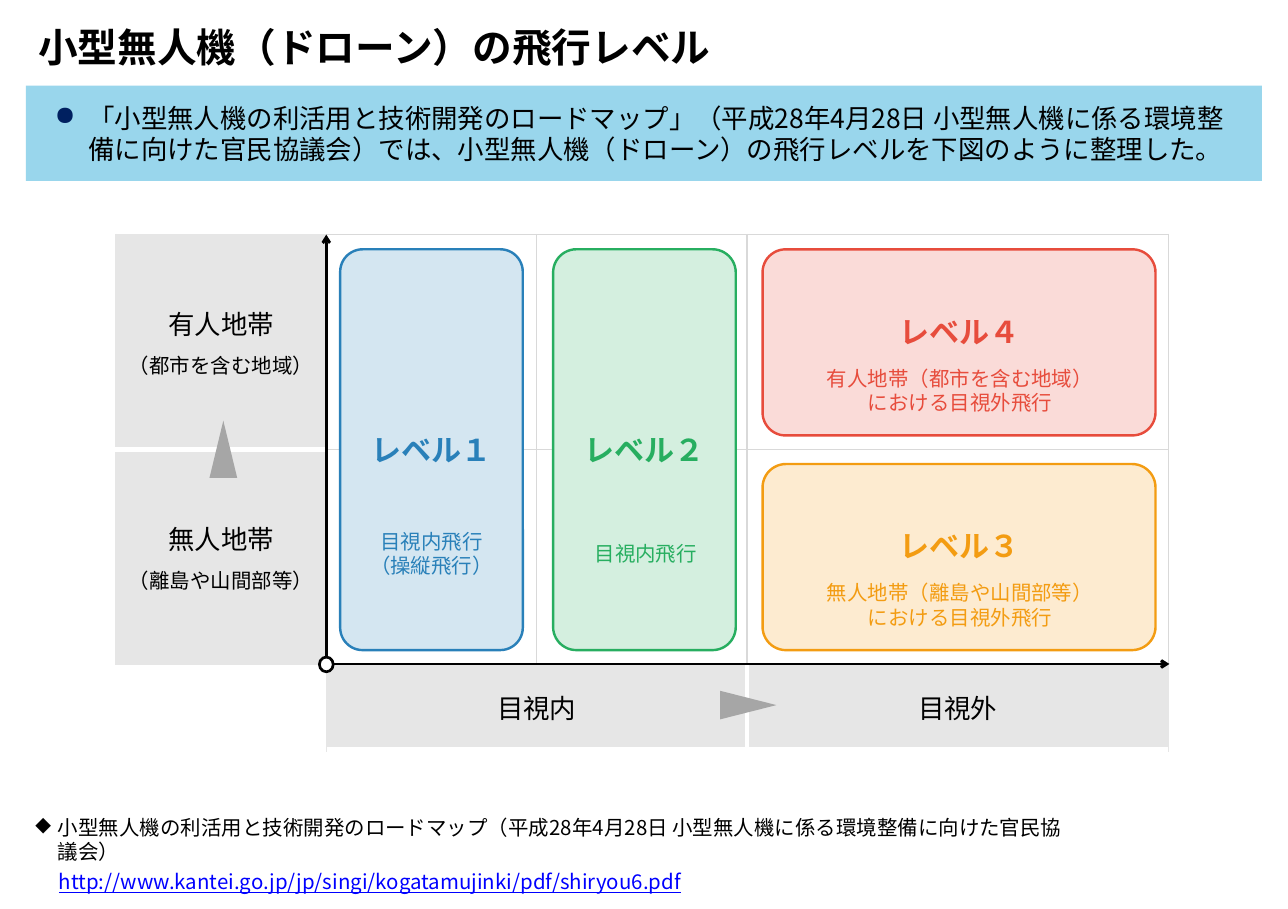
from dataclasses import dataclass
from typing import Optional

import pptx
import pptx.dml.color
import pptx.enum.shapes
import pptx.enum.text
import pptx.oxml.ns
import pptx.util
from lxml import etree

Inches = pptx.util.Inches
Pt = pptx.util.Pt
qn = pptx.oxml.ns.qn
SHAPE = pptx.enum.shapes.MSO_SHAPE
ALIGN = pptx.enum.text.PP_ALIGN
Box = tuple[float, float, float, float]


@dataclass(frozen=True)
class Theme:
    font: str = "Noto Sans CJK JP"
    black: str = "000000"
    white: str = "FFFFFF"
    banner: str = "99D6EC"
    bullet: str = "002060"
    link: str = "0000FF"
    label: str = "E6E6E6"
    grid: str = "D9D9D9"
    pointer: str = "A6A6A6"
    title_size: float = 33
    level_size: float = 25
    body_size: float = 22
    note_size: float = 17
    tight: float = 1.2  # line pitch as a multiple of the type size


@dataclass(frozen=True)
class Level:
    name: str
    note: tuple[str, ...]
    box: Box
    note_box: Box
    fill: str
    color: str
    radius: float
    bottom: float = 0.07


@dataclass(frozen=True)
class Label:
    row: int
    col: int
    text: str
    detail: str
    white_sides: str  # sides that separate this label from its neighbour


T = Theme()

LEVELS = [
    Level("レベル１", ("目視内飛行", "（操縦飛行）"), (3.93, 2.88, 2.11, 4.63),
          (4.04, 6.01, 1.89, 0.77), "D4E6F1", "2980B9", 0.123),
    Level("レベル２", ("目視内飛行",), (6.39, 2.88, 2.11, 4.63),
          (6.35, 6.01, 2.22, 0.77), "D4EFDF", "27AE60", 0.127),
    Level("レベル３", ("無人地帯（離島や山間部等）", "における目視外飛行"), (8.81, 5.36, 4.54, 2.15),
          (8.82, 6.66, 4.54, 0.66), "FDEBD0", "F39C12", 0.126, 0.33),
    Level("レベル４", ("有人地帯（都市を含む地域）", "における目視外飛行"), (8.81, 2.88, 4.54, 2.15),
          (8.82, 4.18, 4.54, 0.66), "FADBD8", "E74C3C", 0.124, 0.33),
]

LABELS = [
    Label(0, 0, "有人地帯", "（都市を含む地域）", "B"),
    Label(1, 0, "無人地帯", "（離島や山間部等）", "T"),
    Label(2, 1, "目視内", "", "RB"),
    Label(2, 3, "目視外", "", "LB"),
]


def rgb(color: str) -> pptx.dml.color.RGBColor:
    return pptx.dml.color.RGBColor.from_string(color)


def add_text(tf, text: str, *, size: float, color: str = T.black, bold: bool = False,
             underline: bool = False, align=ALIGN.LEFT, before: float = 0, after: float = 0,
             tight: bool = False, indent: float = 0, hanging: float = 0,
             bullet: str = "", bullet_color: str = T.black) -> None:
    """Fill the first empty paragraph, or append a new one."""
    p = tf.paragraphs[0] if not tf.text else tf.add_paragraph()
    p.alignment = align
    p.space_before, p.space_after = Pt(before), Pt(after)
    if tight:
        p.line_spacing = Pt(round(size * T.tight, 1))
    pPr = p._p.get_or_add_pPr()
    pPr.set("marL", str(Inches(indent)))
    pPr.set("indent", str(Inches(-hanging)))
    if bullet:
        clr = etree.SubElement(pPr, qn("a:buClr"))
        etree.SubElement(clr, qn("a:srgbClr"), val=bullet_color)
        etree.SubElement(pPr, qn("a:buChar"), char=bullet)
    r = p.add_run()
    r.text = text
    r.font.size, r.font.bold, r.font.underline = Pt(size), bold, underline
    r.font.color.rgb = rgb(color)
    r.font.name = T.font
    etree.SubElement(r._r.get_or_add_rPr(), qn("a:ea"), typeface=T.font)


def set_frame(tf, left: float = 0.14, top: float = 0.07, bottom: Optional[float] = None):
    tf.word_wrap = True
    tf.vertical_anchor = pptx.enum.text.MSO_ANCHOR.MIDDLE
    tf.margin_left = tf.margin_right = Inches(left)
    tf.margin_top = Inches(top)
    tf.margin_bottom = Inches(top if bottom is None else bottom)
    return tf


def add_box(s, box: Box, left: float = 0.14, top: float = 0.07):
    sp = s.shapes.add_textbox(*map(Inches, box))
    return set_frame(sp.text_frame, left, top)


def add_shape(s, kind, box: Box, fill: str, line: str = "", width: float = 2):
    sp = s.shapes.add_shape(kind, *map(Inches, box))
    sp.shadow.inherit = False
    sp.fill.solid()
    sp.fill.fore_color.rgb = rgb(fill)
    if line:
        sp.line.color.rgb = rgb(line)
        sp.line.width = Pt(width)
    else:
        sp.line.fill.background()
    return sp


def add_axis(s, start: tuple[float, float], end: tuple[float, float]) -> None:
    cn = s.shapes.add_connector(pptx.enum.shapes.MSO_CONNECTOR.STRAIGHT,
                                *map(Inches, start + end))
    cn.line.color.rgb = rgb(T.black)
    cn.line.width = Pt(2.25)
    etree.SubElement(cn.line._get_or_add_ln(), qn("a:tailEnd"), type="arrow")
    etree.SubElement(cn._element.spPr, qn("a:effectLst"))


def set_borders(cell, borders: dict[str, tuple[str, float]]) -> None:
    tcPr = cell._tc.get_or_add_tcPr()
    sides = [side for side in "LRTB" if side in borders]
    for i, side in enumerate(sides):
        color, width = borders[side]
        ln = etree.Element(qn(f"a:ln{side}"), w=str(Pt(width)))
        fill = etree.SubElement(ln, qn("a:solidFill"))
        etree.SubElement(fill, qn("a:srgbClr"), val=color)
        tcPr.insert(i, ln)


def add_matrix(s) -> None:
    cols, rows = (2.43, 2.43, 2.43, 4.87), (2.48, 2.48, 0.99)
    frame = s.shapes.add_table(len(rows), len(cols), *map(Inches, (1.34, 2.71, 12.17, 5.95)))
    table = frame.table
    table.first_row = table.horz_banding = False
    for style in frame._element.iter(qn("a:tableStyleId")):
        style.text = "{2D5ABB26-0587-4C30-8999-92F81FD0307C}"
    for col, width in zip(table.columns, cols):
        col.width = Inches(width)
    for row, height in zip(table.rows, rows):
        row.height = Inches(height)
    table.cell(2, 1).merge(table.cell(2, 2))
    for cell in table.iter_cells():
        cell.fill.background()
    # Open grid cells
    for row in range(2):
        for col in range(1, 4):
            set_borders(table.cell(row, col), {side: (T.grid, 1.5) for side in "LRTB"})
    # Grey axis labels
    for label in LABELS:
        cell = table.cell(label.row, label.col)
        cell.fill.solid()
        cell.fill.fore_color.rgb = rgb(T.label)
        set_borders(cell, {side: (T.white, 4.5) if side in label.white_sides else (T.label, 1.5)
                           for side in "LRTB"})
        cell.vertical_anchor = pptx.enum.text.MSO_ANCHOR.MIDDLE
        cell.margin_left = cell.margin_right = Inches(0.14)
        cell.margin_top = cell.margin_bottom = Inches(0.07)
        add_text(cell.text_frame, label.text, size=T.body_size, align=ALIGN.CENTER)
        if label.detail:
            add_text(cell.text_frame, label.detail, size=T.note_size, align=ALIGN.CENTER, before=6)


def add_level(s, level: Level) -> None:
    sp = add_shape(s, SHAPE.ROUNDED_RECTANGLE, level.box, level.fill, level.color)
    sp.adjustments[0] = level.radius
    add_text(set_frame(sp.text_frame, bottom=level.bottom), level.name, size=T.level_size,
             color=level.color, bold=True, align=ALIGN.CENTER)
    tf = add_box(s, level.note_box)
    for line in level.note:
        add_text(tf, line, size=T.note_size, color=level.color, align=ALIGN.CENTER, tight=True)


def main() -> None:
    prs = pptx.Presentation()
    prs.slide_width, prs.slide_height = Inches(14.88), Inches(10.5)
    s = prs.slides.add_slide(prs.slide_layouts[6])

    # Title and summary banner
    add_text(add_box(s, (0.3, 0.18, 14.28, 0.71)), "小型無人機（ドローン）の飛行レベル",
             size=T.title_size, bold=True)
    banner = add_shape(s, SHAPE.RECTANGLE, (0.3, 0.99, 14.28, 1.1), T.banner)
    add_text(set_frame(banner.text_frame, 0.33),
             "「小型無人機の利活用と技術開発のロードマップ」（平成28年4月28日 小型無人機に係る環境整備に向けた"
             "官民協議会）では、小型無人機（ドローン）の飛行レベルを下図のように整理した。",
             size=T.body_size, before=6, after=6, tight=True, indent=0.39, hanging=0.39,
             bullet="●", bullet_color=T.bullet)

    # Matrix of flight levels
    add_matrix(s)
    for level in LEVELS:
        add_level(s, level)

    # Axes, origin and pointers
    origin = (3.77, 7.67)
    for end in ((3.77, 2.71), (13.51, 7.67)):
        add_axis(s, origin, end)
    add_shape(s, SHAPE.OVAL, (3.69, 7.59, 0.16, 0.17), T.white, T.black, 2.25)
    for box, turn in (((2.42, 4.86, 0.32, 0.66), 0), ((8.48, 7.82, 0.33, 0.65), 90)):
        add_shape(s, SHAPE.ISOSCELES_TRIANGLE, box, T.pointer).rotation = turn

    # Reference
    tf = add_box(s, (0.3, 9.48, 12.23, 0.77), 0.11, 0.05)
    add_text(tf, "小型無人機の利活用と技術開発のロードマップ（平成28年4月28日 小型無人機に係る環境整備に向けた官民協議会）",
             size=T.note_size, tight=True, indent=0.26, hanging=0.26, bullet="◆")
    add_text(tf, "http://www.kantei.go.jp/jp/singi/kogatamujinki/pdf/shiryou6.pdf",
             size=T.note_size, color=T.link, underline=True, before=4.2, tight=True, indent=0.27)

    prs.save("out.pptx")


if __name__ == "__main__":
    main()
